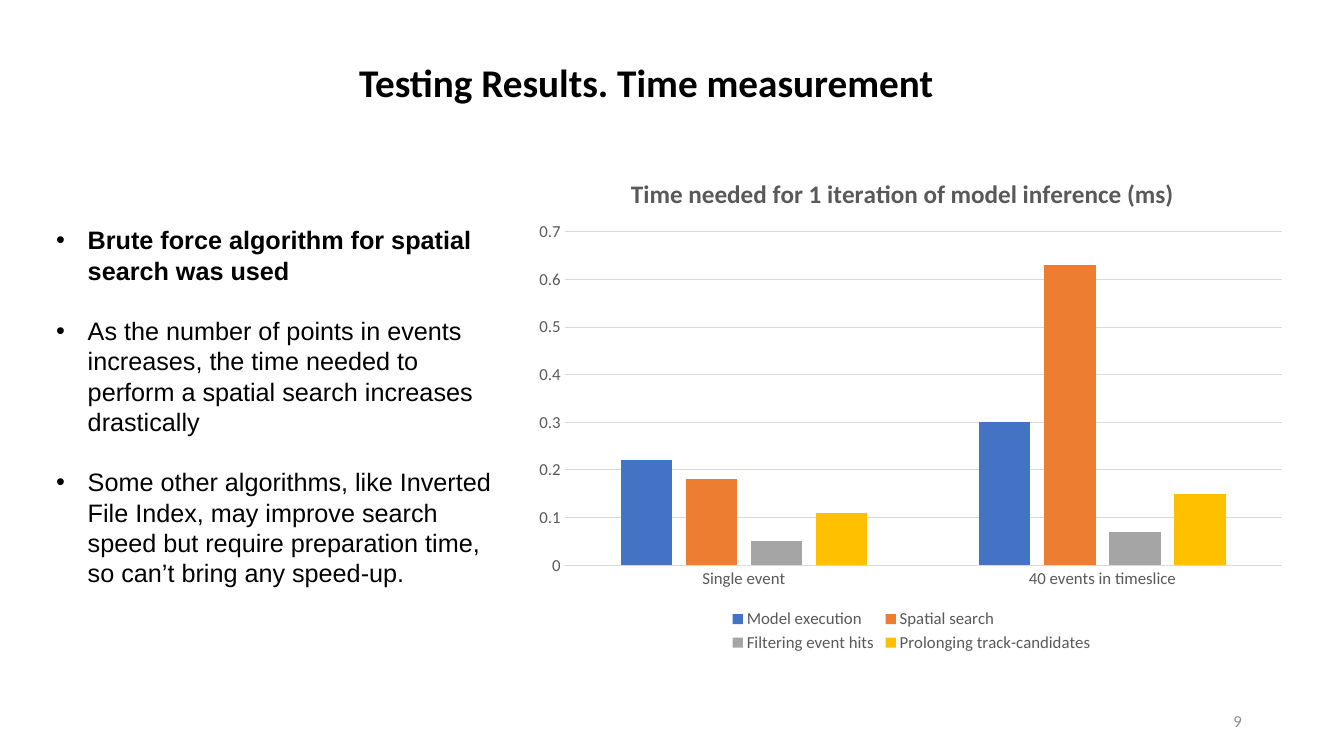
import pptx
import pptx.util
import pptx.dml.color
import pptx.chart.data
import pptx.enum.chart
import pptx.enum.text
import pptx.oxml
import pptx.oxml.ns
import lxml.etree

Pt = pptx.util.Pt
CHART = pptx.enum.chart
ALIGN = pptx.enum.text.PP_ALIGN
ANCHOR = pptx.enum.text.MSO_ANCHOR

TITLE = "Testing Results. Time measurement"
PAGE_NUMBER = "9"
FINDINGS = [
    ("Brute force algorithm for spatial search was used", True),
    ("As the number of points in events increases, the time needed to "
     "perform a spatial search increases drastically", False),
    ("Some other algorithms, like Inverted File Index, may improve search "
     "speed but require preparation time, so can’t bring any speed-up.", False),
]
CHART_TITLE = "Time needed for 1 iteration of model inference (ms)"
CATEGORIES = ["Single event", "40 events in timeslice"]
SERIES = [
    ("Model execution", (0.22, 0.3), "4472C4"),
    ("Spatial search", (0.18, 0.63), "ED7D31"),
    ("Filtering event hits", (0.05, 0.07), "A5A5A5"),
    ("Prolonging track-candidates", (0.11, 0.15), "FFC000"),
]
THEME = {
    "heading_font": "Calibri", "body_font": "Arial",
    "ink": "000000", "label": "595959", "number": "8C8C8C", "rule": "D9D9D9",
    "title": 28, "body": 18, "chart_title": 18, "small": 12,
    "body_line": 21.6, "indent": 22.5, "rule_width": 0.75,
}
PLACES = {
    "title": (47.5, 41.8, 828, 34.6),
    "number": (678.2, 500.4, 216, 28.8),
    "findings": (33.1, 157, 332, 342),
    "chart": (375.8, 108, 550.8, 360.7),
}


def color(value):
    return pptx.dml.color.RGBColor.from_string(value)


def style_font(font, size, tint, name=THEME["heading_font"], bold=False):
    font.size = Pt(size)
    font.name = name
    font.bold = bold
    font.color.rgb = color(tint)


def add_bullet(para):
    properties = para._p.get_or_add_pPr()
    indent = Pt(THEME["indent"])
    properties.set("marL", str(indent))
    properties.set("indent", str(-indent))
    for tag, key, value in (("a:buFont", "typeface", "Arial"), ("a:buChar", "char", "•")):
        lxml.etree.SubElement(properties, pptx.oxml.ns.qn(tag)).set(key, value)


def add_text(page, place, items, *, size, tint, font=THEME["heading_font"],
             align=ALIGN.LEFT, anchor=ANCHOR.TOP, spacing=None, gap=0, bullets=False):
    box = page.shapes.add_textbox(*map(Pt, place))
    frame = box.text_frame
    frame.word_wrap = True
    frame.vertical_anchor = anchor
    for index, (text, bold) in enumerate(items):
        para = frame.add_paragraph() if index else frame.paragraphs[0]
        para.alignment = align
        para.line_spacing = spacing
        para.space_before = Pt(gap if index else 0)
        span = para.add_run()
        span.text = text
        style_font(span.font, size, tint, font, bold)
        if bullets:
            add_bullet(para)


def set_layout(parent, index, inner=False, **fractions):
    tag = pptx.oxml.ns.qn("c:layout")
    for old in parent.findall(tag):
        parent.remove(old)
    layout = lxml.etree.Element(tag)
    manual = lxml.etree.SubElement(layout, pptx.oxml.ns.qn("c:manualLayout"))
    settings = {"layoutTarget": "inner"} if inner else {}
    settings.update(xMode="edge", yMode="edge", **fractions)
    for name, value in settings.items():
        lxml.etree.SubElement(manual, pptx.oxml.ns.qn("c:" + name)).set("val", str(value))
    parent.insert(index, layout)


def style_line(line):
    line.color.rgb = color(THEME["rule"])
    line.width = Pt(THEME["rule_width"])


def add_time_chart(page):
    data = pptx.chart.data.CategoryChartData()
    data.categories = CATEGORIES
    for name, values, _ in SERIES:
        data.add_series(name, values)
    chart = page.shapes.add_chart(
        CHART.XL_CHART_TYPE.COLUMN_CLUSTERED, *map(Pt, PLACES["chart"]), data).chart
    style_font(chart.font, THEME["small"], THEME["label"])

    chart.has_title = True
    para = chart.chart_title.text_frame.paragraphs[0]
    span = para.add_run()
    span.text = CHART_TITLE
    style_font(span.font, THEME["chart_title"], THEME["label"], bold=True)
    chart.chart_title.include_in_layout = False
    set_layout(chart.chart_title._element, 1, x=0.13, y=0.04)

    plot = chart.plots[0]
    plot.gap_width = 219
    plot.overlap = -27
    plot.vary_by_categories = False
    for series, (_, _, tint) in zip(plot.series, SERIES):
        series.format.fill.solid()
        series.format.fill.fore_color.rgb = color(tint)
    set_layout(chart._chartSpace.chart.plotArea, 0, inner=True,
               x=0.05, y=0.16, w=0.93, h=0.66)

    for axis in (chart.category_axis, chart.value_axis):
        axis.major_tick_mark = CHART.XL_TICK_MARK.NONE
        axis.minor_tick_mark = CHART.XL_TICK_MARK.NONE
        style_font(axis.tick_labels.font, THEME["small"], THEME["label"])
    style_line(chart.category_axis.format.line)
    values = chart.value_axis
    values.minimum_scale, values.maximum_scale, values.major_unit = 0, 0.7, 0.1
    values.format.line.fill.background()
    style_line(values.major_gridlines.format.line)

    chart.has_legend = True
    legend = chart.legend
    legend.position = CHART.XL_LEGEND_POSITION.BOTTOM
    legend.include_in_layout = False
    style_font(legend.font, THEME["small"], THEME["label"])
    set_layout(legend._element, 1, x=0.26, y=0.9, w=0.48, h=0.1)


def main():
    deck = pptx.Presentation()
    deck.slide_width, deck.slide_height = Pt(960), Pt(540)
    page = deck.slides.add_slide(deck.slide_layouts[6])
    add_text(page, PLACES["title"], [(TITLE, True)], size=THEME["title"],
             tint=THEME["ink"], align=ALIGN.CENTER, spacing=0.9)
    add_text(page, PLACES["number"], [(PAGE_NUMBER, False)], size=THEME["small"],
             tint=THEME["number"], align=ALIGN.RIGHT, anchor=ANCHOR.MIDDLE)
    add_text(page, PLACES["findings"], FINDINGS, size=THEME["body"], tint=THEME["ink"],
             font=THEME["body_font"], spacing=Pt(THEME["body_line"]),
             gap=THEME["body_line"], bullets=True)
    add_time_chart(page)
    deck.save("out.pptx")


if __name__ == "__main__":
    main()
